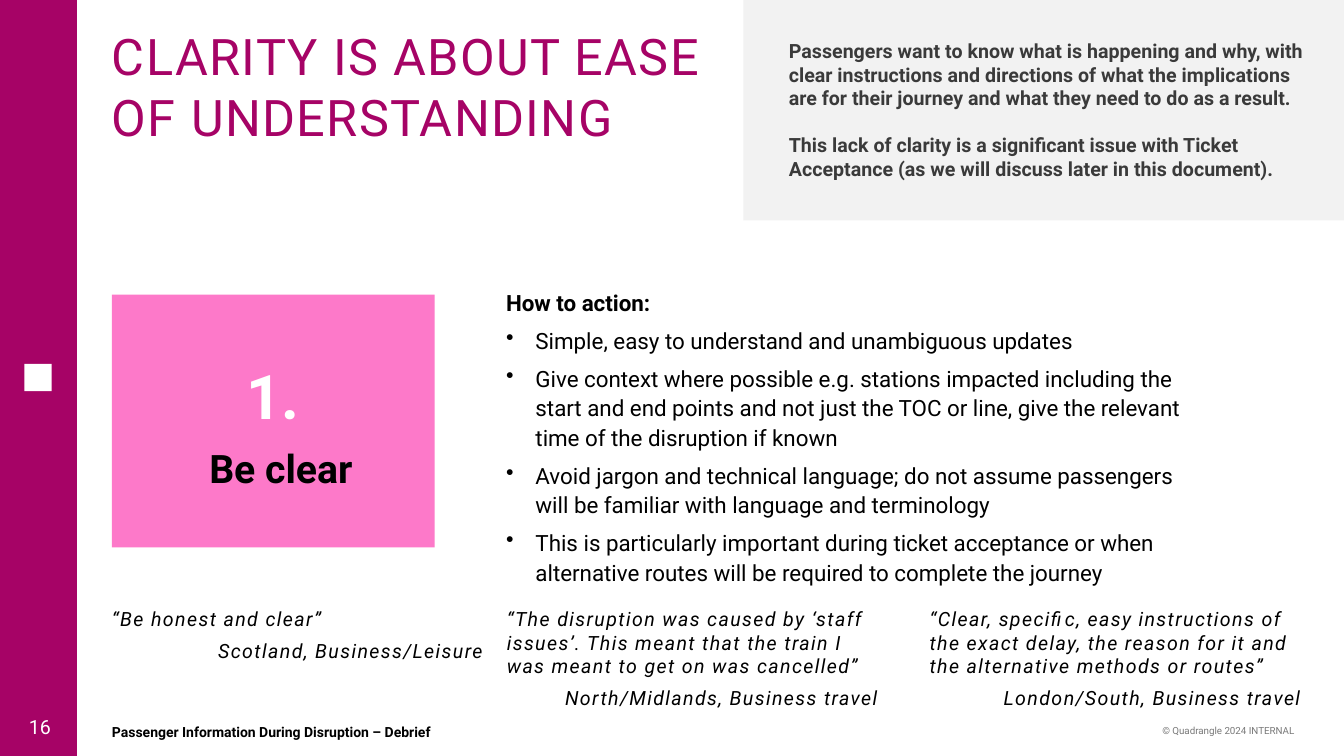
from dataclasses import dataclass

from lxml import etree
from pptx import Presentation
from pptx.dml.color import RGBColor
from pptx.enum.shapes import MSO_SHAPE
from pptx.enum.text import MSO_ANCHOR, MSO_AUTO_SIZE, PP_ALIGN
from pptx.oxml.ns import qn
from pptx.util import Pt

RECTANGLE = MSO_SHAPE.RECTANGLE
TOP, MIDDLE = MSO_ANCHOR.TOP, MSO_ANCHOR.MIDDLE
LEFT, CENTER, RIGHT = PP_ALIGN.LEFT, PP_ALIGN.CENTER, PP_ALIGN.RIGHT
NO_AUTOFIT = MSO_AUTO_SIZE.NONE
FONT = "Roboto"
COLORS = {
    "magenta": "A60366",
    "pink": "FD79C9",
    "panel": "F2F2F2",
    "white": "FFFFFF",
    "black": "000000",
    "dark": "3A3A3A",
    "grey": "797979",
}


@dataclass(frozen=True)
class Box:
    left: float
    top: float
    width: float
    height: float

    def lengths(self) -> tuple:
        return Pt(self.left), Pt(self.top), Pt(self.width), Pt(self.height)


@dataclass(frozen=True)
class Para:
    text: str
    size: float
    color: str = "black"
    bold: bool = False
    italic: bool = False
    tracking: float = 0
    align: PP_ALIGN = LEFT
    before: float = 0
    line: float = 1.0
    bullet: bool = False


@dataclass(frozen=True)
class Quote:
    left: float
    words: str
    speaker: str


SIDEBAR = Box(0, 0, 55, 540)
EMBLEM = Box(17.5, 260, 19.5, 19.5)
SUMMARY_PANEL = Box(531, 0, 429, 157.5)
PRINCIPLE_CARD = Box(80, 210.5, 230.5, 180.5)
QUOTE_TOP, QUOTE_WIDTH, QUOTE_HEIGHT = 433.5, 265, 74
BULLET_INDENT = 21

SUMMARY = [
    "Passengers want to know what is happening and why, with clear instructions and directions of what "
    "the implications are for their journey and what they need to do as a result.",
    "This lack of clarity is a significant issue with Ticket Acceptance "
    "(as we will discuss later in this document).",
]
ACTIONS = [
    "Simple, easy to understand and unambiguous updates",
    "Give context where possible e.g. stations impacted including the start and end points and not just "
    "the TOC or line, give the relevant time of the disruption if known",
    "Avoid jargon and technical language; do not assume passengers will be familiar with language "
    "and terminology",
    "This is particularly important during ticket acceptance or when alternative routes will be required "
    "to complete the journey",
]
QUOTES = [
    Quote(80, "“Be honest and clear”", "Scotland, Business/Leisure"),
    Quote(362, "“The disruption was caused by ‘staff issues’. This meant that the train I was meant to "
          "get on was cancelled”", "North/Midlands, Business travel"),
    Quote(664, "“Clear, specific, easy instructions of the exact delay, the reason for it and the "
          "alternative methods or routes”", "London/South, Business travel"),
]


def write(tf, paras: list[Para], anchor: MSO_ANCHOR = TOP, insets: tuple = (0, 0, 0, 0)) -> None:
    tf.word_wrap = True
    tf.auto_size = NO_AUTOFIT
    tf.vertical_anchor = anchor
    tf.margin_left, tf.margin_top, tf.margin_right, tf.margin_bottom = map(Pt, insets)
    for i, para in enumerate(paras):
        p = tf.paragraphs[0] if i == 0 else tf.add_paragraph()
        p.alignment = para.align
        p.line_spacing = para.line
        p.space_before = Pt(para.before if i else 0)
        if para.bullet:
            pPr = p._p.get_or_add_pPr()
            pPr.set("marL", str(Pt(BULLET_INDENT)))
            pPr.set("indent", str(-Pt(BULLET_INDENT)))
            etree.SubElement(pPr, qn("a:buChar")).set("char", "•")
        r = p.add_run()
        r.text = para.text
        r.font.name = FONT
        r.font.size = Pt(para.size)
        r.font.bold = para.bold
        r.font.italic = para.italic
        r.font.color.rgb = RGBColor.from_string(COLORS[para.color])
        if para.tracking:
            r._r.get_or_add_rPr().set("spc", str(round(para.tracking * 100)))


def add_rect(s, box: Box, fill: str):
    sp = s.shapes.add_shape(RECTANGLE, *box.lengths())
    sp.shadow.inherit = False
    sp.fill.solid()
    sp.fill.fore_color.rgb = RGBColor.from_string(COLORS[fill])
    sp.line.fill.background()
    return sp


def add_text(s, box: Box, paras: list[Para], anchor: MSO_ANCHOR = TOP) -> None:
    write(s.shapes.add_textbox(*box.lengths()).text_frame, paras, anchor)


def add_quote(s, quote: Quote) -> None:
    add_text(s, Box(quote.left, QUOTE_TOP, QUOTE_WIDTH, QUOTE_HEIGHT), [
        Para(quote.words, 14, italic=True, tracking=1),
        Para(quote.speaker, 14, italic=True, tracking=1, align=RIGHT, before=6),
    ])


def main() -> None:
    prs = Presentation()
    prs.slide_width, prs.slide_height = Pt(960), Pt(540)
    s = prs.slides.add_slide(prs.slide_layouts[5])

    title = s.shapes.title
    title.left, title.top, title.width, title.height = Box(80, 18, 429, 87).lengths()
    write(title.text_frame, [Para("CLARITY IS ABOUT EASE OF UNDERSTANDING", 36, "magenta", tracking=1)])

    add_rect(s, SIDEBAR, "magenta")
    add_rect(s, EMBLEM, "white")
    add_rect(s, SUMMARY_PANEL, "panel")
    add_text(s, Box(563.5, 28, 368, 119),
             [Para(text, 14, "dark", bold=True, before=16.6) for text in SUMMARY])

    card = add_rect(s, PRINCIPLE_CARD, "pink")
    write(card.text_frame, [
        Para("1. ", 44, "white", bold=True, align=CENTER, line=1.1),
        Para("Be clear", 28, bold=True, align=CENTER, before=6, line=1.1),
    ], MIDDLE, (28, 3.6, 17.3, 3.6))

    add_text(s, Box(361.5, 204.5, 490, 190), [
        Para("How to action:", 16, bold=True, line=1.1),
        *[Para(text, 16, before=6, line=1.1, bullet=True) for text in ACTIONS],
    ])
    for quote in QUOTES:
        add_quote(s, quote)

    add_text(s, Box(80, 517, 292, 12),
             [Para("Passenger Information During Disruption – Debrief", 10, bold=True)], MIDDLE)
    add_text(s, Box(608, 514, 316.5, 16),
             [Para("© Quadrangle 2024 INTERNAL", 7, "grey", align=RIGHT)], MIDDLE)
    add_text(s, Box(0, 505, 57, 28), [Para("16", 14, "white", align=CENTER)], MIDDLE)

    prs.save("out.pptx")


if __name__ == "__main__":
    main()
